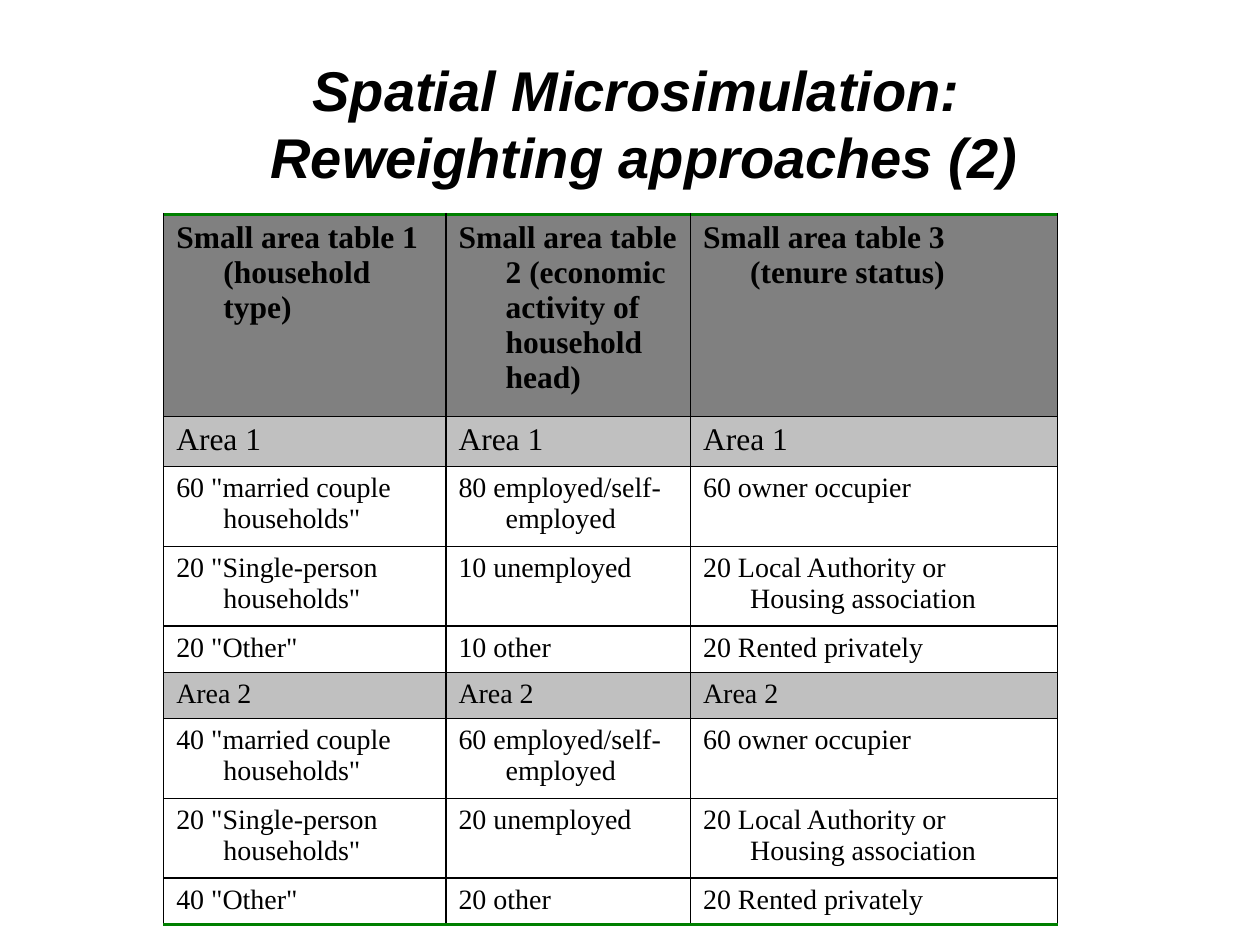
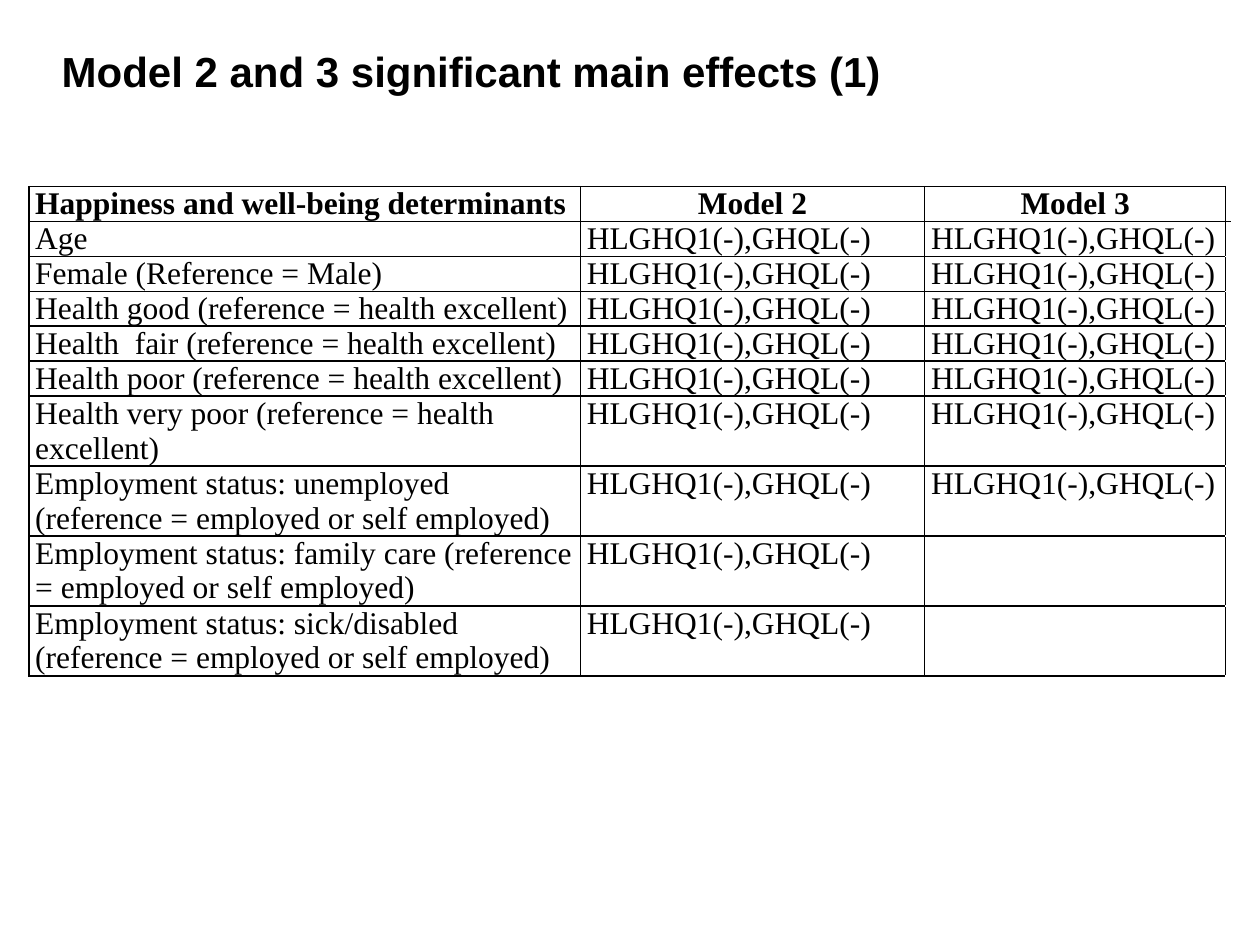
from lxml import etree
from pptx import Presentation
from pptx.dml.color import RGBColor
from pptx.enum.text import MSO_ANCHOR, MSO_AUTO_SIZE, PP_ALIGN
from pptx.oxml.ns import qn
from pptx.util import Cm, Pt

BLACK = RGBColor(0x00, 0x00, 0x00)
GREEN = RGBColor(0x00, 0x80, 0x00)
HEADER_GREY = RGBColor(0x80, 0x80, 0x80)
AREA_GREY = RGBColor(0xC0, 0xC0, 0xC0)
LEFT, CENTER = PP_ALIGN.LEFT, PP_ALIGN.CENTER
TOP, BOTTOM = MSO_ANCHOR.TOP, MSO_ANCHOR.BOTTOM
NO_AUTOFIT = MSO_AUTO_SIZE.NONE
TITLE_FONT = "Arial"
TABLE_FONT = "Times New Roman"
TITLE_ONLY = 5
HANGING = Cm(0.95)

SMALL_AREA_HEADERS = (
    "Small area table 1 (household type)",
    "Small area table 2 (economic activity of household head)",
    "Small area table 3 (tenure status)",
)
CATEGORIES = (
    ('"married couple households"', "employed/self-employed", "owner occupier"),
    ('"Single-person households"', "unemployed", "Local Authority or Housing association"),
    ('"Other"', "other", "Rented privately"),
)
AREA_COUNTS = {
    "Area 1": ((60, 80, 60), (20, 10, 20), (20, 10, 20)),
    "Area 2": ((40, 60, 60), (20, 20, 20), (40, 20, 20)),
}
AREA_HEIGHTS = (1.61, 1.61, 0.93)

MODEL_HEADERS = ("Happiness and well-being determinants", "Model 2", "Model 3", "")
EFFECT = "HLGHQ1(-),GHQL(-)"
SHARED_DETERMINANTS = (
    "Age",
    "Female (Reference = Male)",
    "Health good (reference = health excellent)",
    "Health  fair (reference = health excellent)",
    "Health poor (reference = health excellent)",
    "Health very poor (reference = health excellent)",
    "Employment status: unemployed (reference = employed or self employed)",
)
MODEL_2_DETERMINANTS = (
    "Employment status: family care (reference = employed or self employed)",
    "Employment status: sick/disabled (reference = employed or self employed)",
)


def style_font(font, name, size, bold=False, italic=False):
    """Apply the black text style used across the deck."""
    font.name, font.size = name, Pt(size)
    font.bold, font.italic = bold, italic
    font.color.rgb = BLACK


def add_titled_slide(deck, lines, box, size, align, anchor, italic=False):
    """Add a title-only slide with its title placed in the given box."""
    page = deck.slides.add_slide(deck.slide_layouts[TITLE_ONLY])
    title = page.shapes.title
    title.left, title.top, title.width, title.height = (Cm(v) for v in box)
    frame = title.text_frame
    frame.text = "\n".join(lines)
    frame.word_wrap = True
    frame.auto_size = NO_AUTOFIT
    frame.vertical_anchor = anchor
    for para in frame.paragraphs:
        para.alignment = align
        style_font(para.font, TITLE_FONT, size, True, italic)
    return page


def set_borders(cell, borders):
    """Draw cell edges from a mapping of edge letter to (colour, points)."""
    properties = cell._tc.get_or_add_tcPr()
    for edge in "LRTB":
        if edge in borders:
            colour, points = borders[edge]
            line = etree.SubElement(properties, qn(f"a:ln{edge}"), w=str(Pt(points)))
            fill = etree.SubElement(line, qn("a:solidFill"))
            etree.SubElement(fill, qn("a:srgbClr"), val=str(colour))


def add_plain_table(page, left, top, widths, heights):
    """Add an unbanded table whose column and row sizes are in centimetres."""
    table = page.shapes.add_table(
        len(heights), len(widths), Cm(left), Cm(top), Cm(sum(widths)), Cm(sum(heights))
    ).table
    table.first_row = table.horz_banding = False
    for column, width in zip(table.columns, widths):
        column.width = Cm(width)
    for row, height in zip(table.rows, heights):
        row.height = Cm(height)
    return table


def fill_cell(cell, text, size, bold, borders, colour=None):
    """Write, border and fill one cell, returning its paragraph."""
    set_borders(cell, borders)
    if colour is None:
        cell.fill.background()
    else:
        cell.fill.solid()
        cell.fill.fore_color.rgb = colour
    cell.text = text
    para = cell.text_frame.paragraphs[0]
    style_font(para.font, TABLE_FONT, size, bold)
    return para


def add_small_area_table(page, left, top):
    """Add the household counts of both areas."""
    rows = [(SMALL_AREA_HEADERS, HEADER_GREY, 4.07)]
    for area, counts in AREA_COUNTS.items():
        rows.append(([area] * 3, AREA_GREY, 1.01 if len(rows) == 1 else 0.93))
        for numbers, names, height in zip(counts, CATEGORIES, AREA_HEIGHTS):
            texts = [f"{number} {name}" for number, name in zip(numbers, names)]
            rows.append((texts, None, height))
    table = add_plain_table(page, left, top, (5.69, 4.93, 7.39), [row[2] for row in rows])
    for r, (texts, colour, _) in enumerate(rows):
        borders = dict.fromkeys("LRTB", (BLACK, 0.75))
        if r == 0:
            borders["T"] = (GREEN, 2)
        if r == len(rows) - 1:
            borders["B"] = (GREEN, 2)
        for c, text in enumerate(texts):
            para = fill_cell(table.cell(r, c), text, 18 if r < 2 else 16, r == 0, borders, colour)
            properties = para._p.get_or_add_pPr()
            properties.set("marL", str(HANGING))
            properties.set("indent", str(-HANGING))


def add_model_table(page, left, top):
    """Add the significant effects, with a narrow open column at the right."""
    rows = [MODEL_HEADERS]
    rows += [(name, EFFECT, EFFECT, "") for name in SHARED_DETERMINANTS]
    rows += [(name, EFFECT, "", "") for name in MODEL_2_DETERMINANTS]
    heights = [0.7] * 6 + [1.41] * 4
    table = add_plain_table(page, left, top, (11.12, 6.94, 6.07, 0.08), heights)
    for r, texts in enumerate(rows):
        for c, text in enumerate(texts):
            edges = "LRTB" if c < 3 else {0: "LB", 1: "LT"}.get(r, "L")
            cell = table.cell(r, c)
            cell.margin_left = cell.margin_right = Cm(0.13 if c < 3 else 0)
            cell.margin_top = cell.margin_bottom = 0
            para = fill_cell(cell, text, 18, r == 0, dict.fromkeys(edges, (BLACK, 1)))
            para.alignment = CENTER if r == 0 and c > 0 else LEFT


def main():
    """Build and save the deck."""
    deck = Presentation()
    deck.slide_width, deck.slide_height = Cm(25.4), Cm(19.05)
    page = add_titled_slide(
        deck, ("Spatial Microsimulation: ", "Reweighting approaches (2)"),
        (0.58, 0.58, 24.82, 3.38), 32, CENTER, BOTTOM, italic=True,
    )
    add_small_area_table(page, 3.3, 4.32)
    page = add_titled_slide(
        deck, ("Model 2 and 3 significant main effects (1)",),
        (0.99, 0.79, 22.43, 1.3), 24, LEFT, TOP,
    )
    add_model_table(page, 0.58, 3.76)
    deck.save("out.pptx")


if __name__ == "__main__":
    main()
